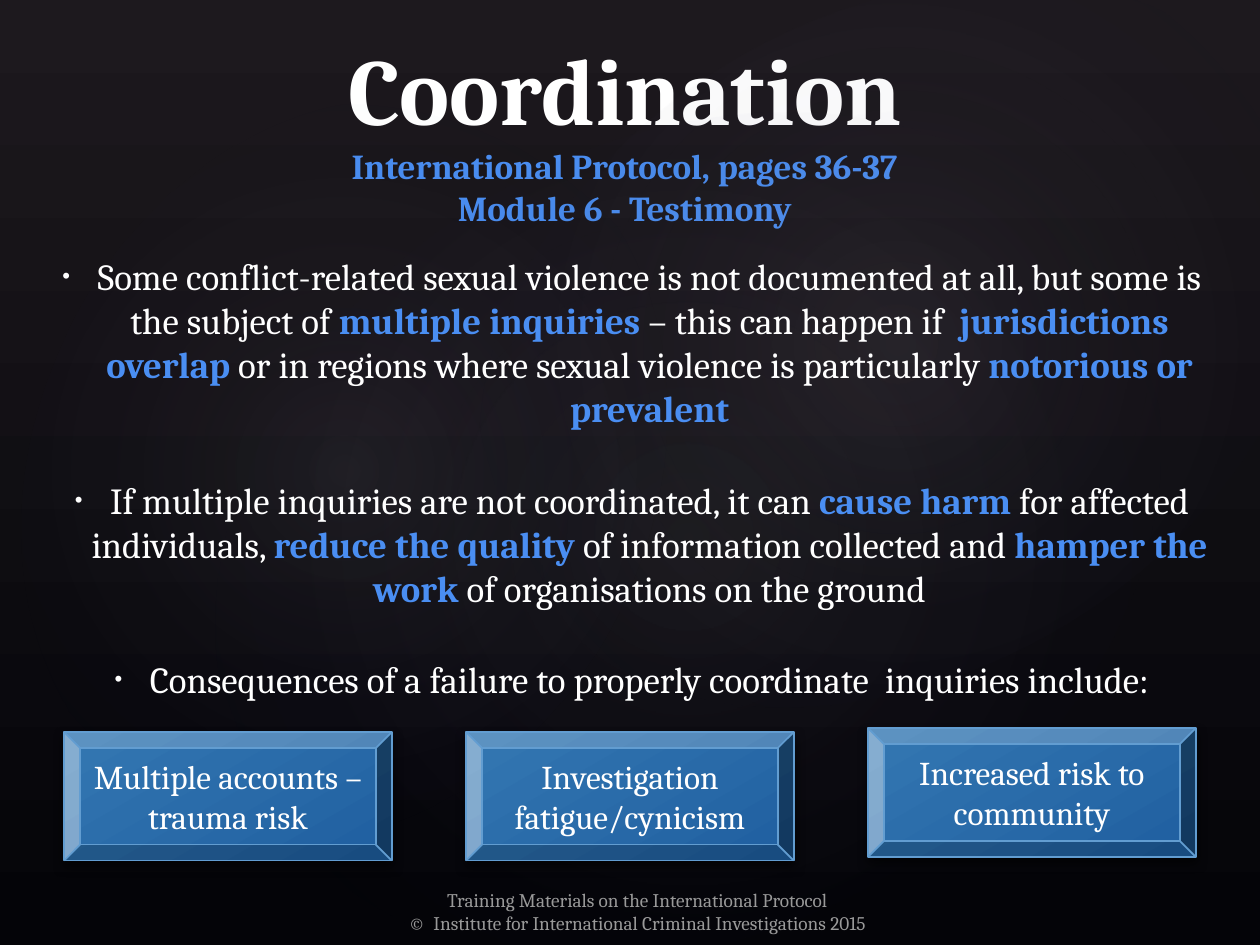
from dataclasses import dataclass
from lxml.etree import SubElement as Sub
from pptx import Presentation
from pptx.dml.color import RGBColor as RGB
from pptx.enum.shapes import MSO_SHAPE as Kind
from pptx.enum.text import MSO_ANCHOR as Anchor, MSO_AUTO_SIZE as Fit, PP_ALIGN as Align
from pptx.oxml.ns import qn
from pptx.util import Inches, Pt


@dataclass(frozen=True)
class Theme:
    font: str = "Cambria"
    white: str = "FFFFFF"
    blue: str = "4A8EF2"
    gray: str = "999999"
    edge: str = "629DD1"
    top: str = "1D191E"
    base: str = "040408"
    glow: str = "C4BCC6"
    navy: str = "242852"
    light: str = "3477B2"
    dark: str = "1F5FA0"
    black: str = "000000"
    head: int = 54
    sub: int = 20
    body: int = 21
    box: int = 19
    foot: int = 11


T = Theme()


def write(para, text, size, color, bold=False):
    para.alignment = Align.CENTER
    run = para.add_run()
    run.text = text
    font = run.font
    font.name, font.size, font.bold = T.font, Pt(size), bold
    font.color.rgb = RGB.from_string(color)


def shade(shape, stops, angle=None):
    """Fill with (percent, colour, opacity) stops; radial if no angle."""
    shape.fill.background()
    blank = shape._element.spPr.find(qn("a:noFill"))
    grad = blank.makeelement(qn("a:gradFill"), {"rotWithShape": "1"})
    blank.getparent().replace(blank, grad)
    marks = Sub(grad, qn("a:gsLst"))
    for pos, color, alpha in stops:
        mark = Sub(marks, qn("a:gs"), pos=str(pos * 1000))
        tint = Sub(mark, qn("a:srgbClr"), val=color)
        Sub(tint, qn("a:alpha"), val=str(alpha * 1000))
    if angle is None:
        way = Sub(grad, qn("a:path"), path="circle")
        Sub(way, qn("a:fillToRect"), l="50000", t="50000", r="50000", b="50000")
    else:
        Sub(grad, qn("a:lin"), ang=str(angle * 60000), scaled="0")


deck = Presentation()
deck.slide_width, deck.slide_height = Inches(10), Inches(7.5)
slide = deck.slides.add_slide(deck.slide_layouts[5])
shapes = slide.shapes

# Backdrop
back = slide.background.fill
back.gradient()
back.gradient_angle = 270
for stop, color in zip(back.gradient_stops, (T.top, T.base)):
    stop.color.rgb = RGB.from_string(color)

glows = [
    (1.5, 1.14, 7.92, 6.24, 328.7, 7),
    (-0.3, 1.28, 6.06, 4.9, 294.3, 8),
    (3.58, 0.13, 7.09, 5.2, 328.7, 8),
]
for *place, turn, alpha in glows:
    glow = shapes.add_shape(Kind.OVAL, *map(Inches, place))
    glow.rotation = turn
    glow.shadow.inherit = False
    glow.line.fill.background()
    shade(glow, [(0, T.glow, alpha), (58, T.navy, 0)])

# Title
title = shapes.title
title.left, title.top = Inches(0.51), Inches(0.29)
title.width, title.height = Inches(8.9), Inches(1.57)
frame = title.text_frame
frame.auto_size, frame.vertical_anchor = Fit.NONE, Anchor.BOTTOM
write(frame.paragraphs[0], "Coordination", T.head, T.white, True)
for line in ("International Protocol, pages 36-37", "Module 6 - Testimony"):
    write(frame.add_paragraph(), line, T.sub, T.blue, True)

# Points: plain and stressed runs alternate
points = [
    ["Some conflict-related sexual violence is not documented at all, "
     "but some is the subject of ", "multiple inquiries",
     " – this can happen if  ", "jurisdictions overlap",
     " or in regions where sexual violence is particularly ",
     "notorious or prevalent"],
    ["If multiple inquiries are not coordinated, it can ", "cause harm",
     " for affected individuals, ", "reduce the quality ",
     "of information collected and ", "hamper the work ",
     "of organisations on the ground"],
    ["Consequences of a failure to properly coordinate  inquiries include:"],
]
body = shapes.add_textbox(Inches(0.2), Inches(1.94), Inches(9.61), Inches(3.7))
frame = body.text_frame
frame.word_wrap, frame.vertical_anchor = True, Anchor.MIDDLE
for i, parts in enumerate(points):
    para = frame.add_paragraph() if i else frame.paragraphs[0]
    para.space_before = Pt(27 if i else 4)
    for j, part in enumerate(parts):
        bold = j % 2 == 1
        write(para, part, T.body, T.blue if bold else T.white, bold)
    props = para._p.get_or_add_pPr()
    props.set("marL", str(Inches(0.3)))
    props.set("indent", str(Inches(-0.28)))
    Sub(props, qn("a:buSzPct"), val="60000")
    Sub(props, qn("a:buFont"), typeface="Arial")
    Sub(props, qn("a:buChar"), char="•")

# Footer
foot = shapes.add_textbox(Inches(2.56), Inches(7), Inches(5), Inches(0.45))
frame = foot.text_frame
frame.word_wrap = True
write(frame.paragraphs[0], "Training Materials on the International Protocol", T.foot, T.gray)
write(frame.add_paragraph(),
      "©  Institute for International Criminal Investigations 2015", T.foot, T.gray)

# Consequences
risks = [
    ("Multiple accounts – trauma risk", 5.81),
    ("Investigation fatigue/cynicism", 5.81),
    ("Increased risk to community", 5.78),
]
for i, (text, top) in enumerate(risks):
    box = shapes.add_shape(Kind.BEVEL, Inches(0.51 + i * 3.19), Inches(top),
                           Inches(2.6), Inches(1.02))
    shade(box, [(0, T.light, 100), (100, T.dark, 100)], 60)
    box.line.color.rgb = RGB.from_string(T.edge)
    box.line.width = Pt(1)
    box.shadow.inherit = False
    cast = Sub(box._element.spPr.find(qn("a:effectLst")), qn("a:outerShdw"),
               blurRad=str(Pt(6)), dist=str(Pt(3)), dir="5400000", rotWithShape="0")
    tint = Sub(cast, qn("a:srgbClr"), val=T.black)
    Sub(tint, qn("a:alpha"), val="60000")
    frame = box.text_frame
    frame.word_wrap, frame.vertical_anchor = True, Anchor.MIDDLE
    write(frame.paragraphs[0], text, T.box, T.white)

deck.save("out.pptx")
